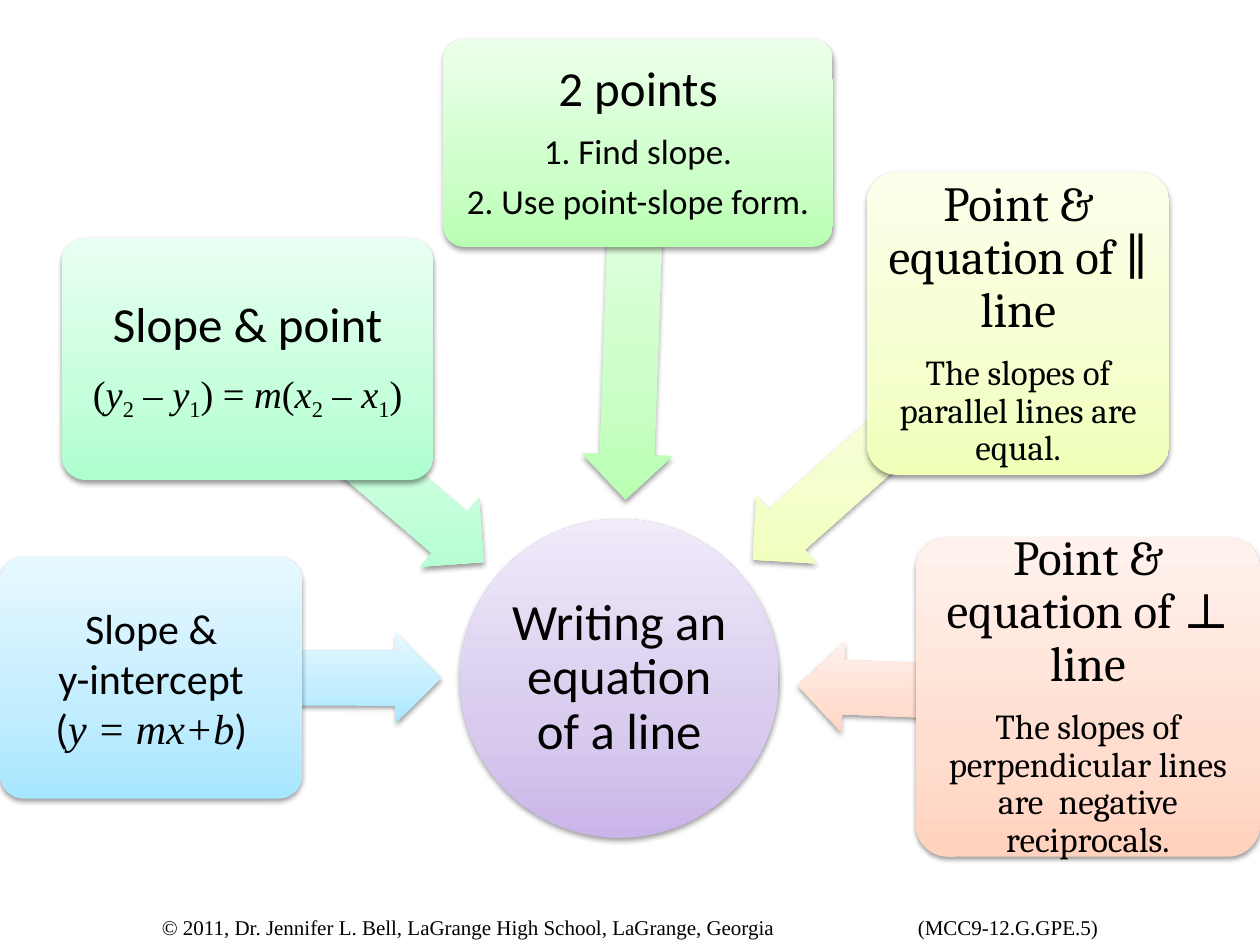
from math import atan2, cos, degrees, hypot, sin

from pptx import Presentation
from pptx.dml.color import RGBColor as Rgb
from pptx.enum.shapes import MSO_SHAPE as Kind
from pptx.enum.text import MSO_ANCHOR as Anchor, MSO_AUTO_SIZE as Auto, PP_ALIGN as Align
from pptx.oxml import parse_xml
from pptx.oxml.ns import nsdecls
from pptx.util import Pt


class Theme:
    ink = "000000"
    sans, serif, math = "Calibri", "Cambria", "Times New Roman"
    hub, head, formula, body, plain, foot = 29, 28, 22, 20, 24, 12
    # Gradient colours from bottom to top
    purple = ("C9B5E8", "D8CBEE", "F0EAF9")
    blue = ("A7E6FF", "C1EDFF", "E7F8FF")
    mint = ("ADFFCD", "C5FFDB", "E9FFF1")
    green = ("B9FFB2", "CDFFC9", "ECFFEA")
    yellow = ("F0FFB8", "F4FFCD", "FBFFEC")
    peach = ("FFD2BD", "FFDED0", "FFF2ED")
    stops = (0, 35, 100)


VAR, SUB = {"italic": True}, {"sub": True}
FORMULA = [
    ("(", {}), ("y", VAR), ("2", SUB), (" – ", {}), ("y", VAR), ("1", SUB),
    (") = ", {}), ("m", VAR), ("(", {}), ("x", VAR), ("2", SUB), (" – ", {}),
    ("x", VAR), ("1", SUB), (")", {}),
]
LINE = [("(", {}), ("y = mx+b", {"font": Theme.math, "italic": True}), (")", {})]

# A paragraph is (text or list of runs, size, font)
HUB = {
    "box": (262.8, 296.6, 182.2, 182.2), "tint": Theme.purple, "pad": 1.4,
    "text": [("Writing an equation of a line", Theme.hub, Theme.sans)],
}
CARDS = [
    {"box": (0, 318.2, 172.8, 138.2), "tint": Theme.blue, "pad": 3.6, "tight": False,
     "text": [("Slope &", Theme.plain, Theme.sans),
              ("y-intercept", Theme.plain, Theme.sans),
              (LINE, Theme.plain, Theme.sans)]},
    {"box": (35.3, 136.1, 212.4, 138.2), "tint": Theme.mint,
     "text": [("Slope & point", Theme.head, Theme.sans),
              (FORMULA, Theme.formula, Theme.math)]},
    {"box": (253.4, 22.3, 222.5, 118.8), "tint": Theme.green,
     "text": [("2 points", Theme.head, Theme.sans),
              ("1. Find slope.", Theme.body, Theme.sans),
              ("2. Use point-slope form.", Theme.body, Theme.sans)]},
    {"box": (495.4, 98.6, 172.8, 172.8), "tint": Theme.yellow,
     "text": [("Point & equation of ∥ line", Theme.head, Theme.serif),
              ("The slopes of parallel lines are equal.", Theme.body, Theme.serif)]},
    {"box": (523.4, 306.7, 196.6, 182.9), "tint": Theme.peach,
     "text": [("Point & equation of ⊥ line", Theme.head, Theme.serif),
              ("The slopes of perpendicular lines are  negative reciprocals.",
               Theme.body, Theme.serif)]},
]
FOOT = ("© 2011, Dr. Jennifer L. Bell, LaGrange High School, LaGrange, Georgia"
        "\t\t\t(MCC9-12.G.GPE.5)")
FOOT_BOX = (0, 519.1, 720, 21.6)

GAP, THICK = 11, 51.8  # arrow tip to hub, arrow height
CORNER = 0.1
ROUND_IN = CORNER * (1 - cos(atan2(1, 1)))  # text inset per short side
OVAL_IN = (1 - cos(atan2(1, 1))) / 2


def paint(shape, tint):
    """Give a shape its upright gradient and soft shadow, without an outline."""
    shape.line.fill.background()
    shape.shadow.inherit = False
    stops = "".join(
        f'<a:gs pos="{pos * 1000}"><a:srgbClr val="{hue}"/></a:gs>'
        for pos, hue in zip(Theme.stops, tint))
    props = shape._element.spPr
    props.find("{*}ln").addprevious(parse_xml(
        f'<a:gradFill {nsdecls("a")} rotWithShape="0"><a:gsLst>{stops}</a:gsLst>'
        '<a:lin ang="16200000" scaled="0"/></a:gradFill>'))
    props.find("{*}effectLst").append(parse_xml(
        f'<a:outerShdw {nsdecls("a")} blurRad="{Pt(3.1)}" dist="{Pt(1.6)}" '
        f'dir="5400000" rotWithShape="0"><a:srgbClr val="{Theme.ink}">'
        '<a:alpha val="38000"/></a:srgbClr></a:outerShdw>'))


def draw(slide, kind, box, tint, adj=()):
    shape = slide.shapes.add_shape(kind, *map(Pt, box))
    for i, value in enumerate(adj):
        shape.adjustments[i] = value
    paint(shape, tint)
    return shape


def write(slide, box, text, pad=None, anchor=Anchor.MIDDLE, tight=True):
    """Set centred paragraphs; tight ones have 90% lines and 35% space after."""
    area = slide.shapes.add_textbox(*map(Pt, box))
    frame = area.text_frame
    frame.word_wrap = True
    frame.vertical_anchor = anchor
    if pad is not None:
        frame.margin_left = frame.margin_right = Pt(pad)
        frame.margin_top = frame.margin_bottom = Pt(pad)
    for i, (runs, size, face) in enumerate(text):
        para = frame.add_paragraph() if i else frame.paragraphs[0]
        para.alignment = Align.CENTER
        if tight:
            para.line_spacing = 0.9
            para._p.get_or_add_pPr().append(parse_xml(
                f'<a:spcAft {nsdecls("a")}><a:spcPct val="35000"/></a:spcAft>'))
        for words, style in [(runs, {})] if isinstance(runs, str) else runs:
            run = para.add_run()
            run.text = words
            run.font.size = Pt(size)
            run.font.name = style.get("font", face)
            run.font.italic = style.get("italic", False)
            run.font.color.rgb = Rgb.from_string(Theme.ink)
            if style.get("sub"):
                run.font._element.set("baseline", "-25000")
    return frame


def inset(box, share):
    left, top, wide, high = box
    edge = share * min(wide, high)
    return left + edge, top + edge, wide - 2 * edge, high - 2 * edge


def middle(box):
    left, top, wide, high = box
    return left + wide / 2, top + high / 2


def point(slide, card):
    """Draw an arrow from the card's centre to just short of the hub."""
    (x, y), (hub_x, hub_y) = middle(card["box"]), middle(HUB["box"])
    turn = atan2(hub_y - y, hub_x - x)
    size = hypot(hub_x - x, hub_y - y) - HUB["box"][2] / 2 - GAP
    mid_x, mid_y = x + cos(turn) * size / 2, y + sin(turn) * size / 2
    box = (mid_x - size / 2, mid_y - THICK / 2, size, THICK)
    arrow = draw(slide, Kind.LEFT_ARROW, box, card["tint"], (0.6, 0.5))
    arrow.rotation = degrees(turn) + 180


def main():
    deck = Presentation()
    deck.slide_width, deck.slide_height = Pt(720), Pt(540)
    slide = deck.slides.add_slide(deck.slide_layouts[6])

    draw(slide, Kind.OVAL, HUB["box"], HUB["tint"])
    write(slide, inset(HUB["box"], OVAL_IN), HUB["text"], pad=HUB["pad"])

    for card in CARDS:
        point(slide, card)
        draw(slide, Kind.ROUNDED_RECTANGLE, card["box"], card["tint"], (CORNER,))
        write(slide, inset(card["box"], ROUND_IN), card["text"],
              pad=card.get("pad", 4.2), tight=card.get("tight", True))

    foot = write(slide, FOOT_BOX, [(FOOT, Theme.foot, Theme.math)],
                 anchor=Anchor.TOP, tight=False)
    foot.auto_size = Auto.SHAPE_TO_FIT_TEXT
    deck.save("out.pptx")


if __name__ == "__main__":
    main()
